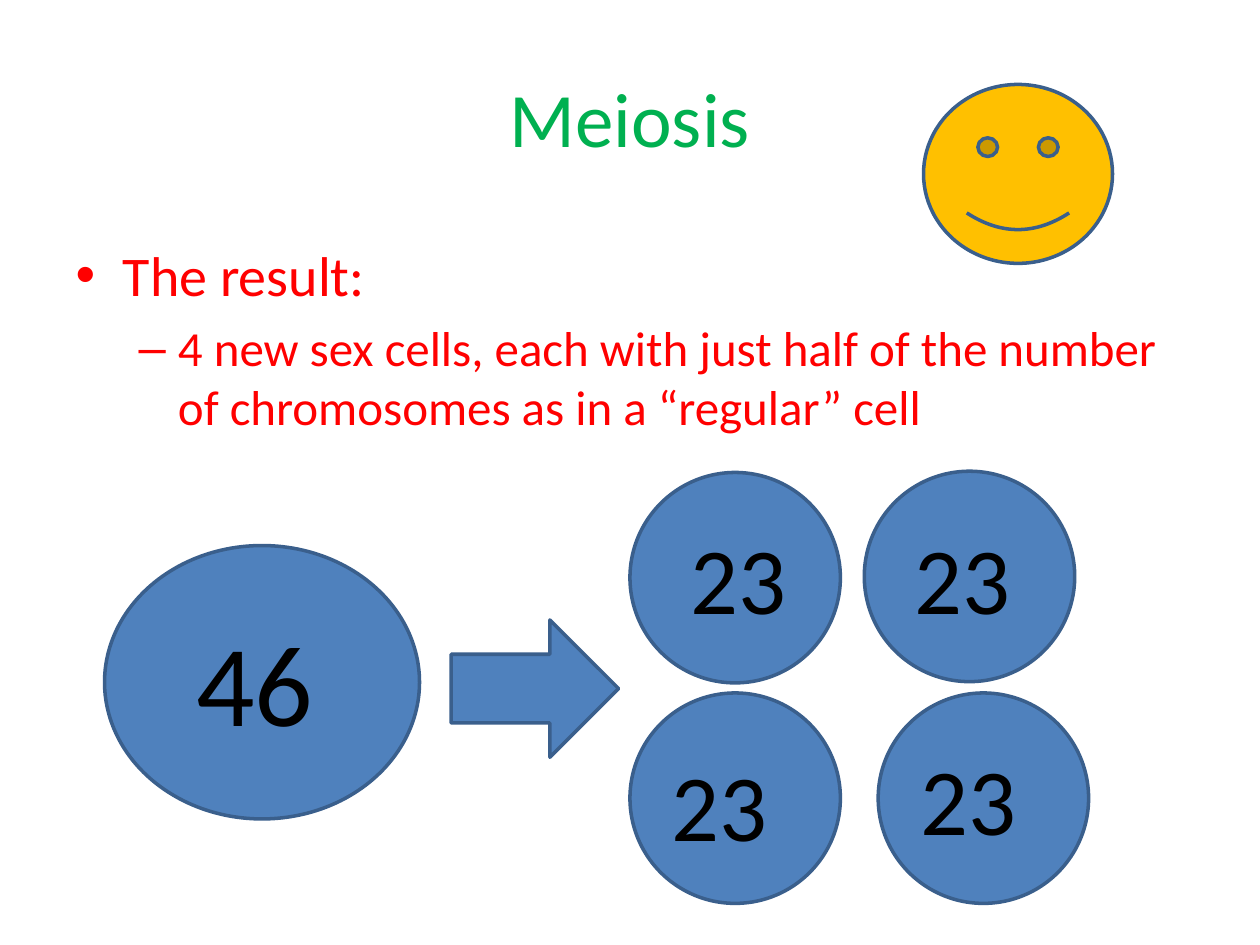
"""Build the slide that shows the result of meiosis."""
from pptx import Presentation
from pptx.dml.color import RGBColor
from pptx.enum.shapes import MSO_SHAPE as Shape
from pptx.enum.text import MSO_AUTO_SIZE as AutoSize
from pptx.util import Inches, Pt

GREEN = RGBColor(0x00, 0xB0, 0x50)
RED = RGBColor(0xFF, 0x00, 0x00)
BLACK = RGBColor(0x00, 0x00, 0x00)
BLUE = RGBColor(0x4F, 0x81, 0xBD)
OUTLINE = RGBColor(0x3A, 0x5F, 0x8C)
YELLOW = RGBColor(0xFF, 0xC0, 0x00)

DAUGHTER_SIZE = 1.67
DAUGHTER_CELLS = [(5, 3.75), (6.97, 5.5), (6.86, 3.74), (5, 5.5)]
DAUGHTER_COUNTS = [
    (5.38, 4.08, 1.44),
    (5.23, 5.88, 1.44),
    (7.21, 5.83, 1.44),
    (7.16, 4.08, 1.27),
]


def write(paragraph, text, size, color, font="Calibri", level=0):
    paragraph.level = level
    run = paragraph.add_run()
    run.text = text
    run.font.name = font
    run.font.size = Pt(size)
    run.font.color.rgb = color


def place(shape, left, top, width, height):
    shape.left, shape.top = Inches(left), Inches(top)
    shape.width, shape.height = Inches(width), Inches(height)


class SlideBuilder:
    def __init__(self, slide, line_color=OUTLINE, line_width=2):
        self.slide = slide
        self.line_color = line_color
        self.line_width = line_width

    def title(self, text, box):
        title = self.slide.shapes.title
        place(title, *box)
        write(title.text_frame.paragraphs[0], text, 44, GREEN)

    def bullets(self, items, box):
        body = self.slide.placeholders[1]
        place(body, *box)
        frame = body.text_frame
        for index, (text, size, level) in enumerate(items):
            paragraph = frame.add_paragraph() if index else frame.paragraphs[0]
            write(paragraph, text, size, RED, level=level)

    def group(self):
        return self.slide.shapes.add_group_shape()

    def shape(self, kind, box, fill=BLUE, parent=None):
        owner = parent or self.slide
        shape = owner.shapes.add_shape(kind, *map(Inches, box))
        shape.shadow.inherit = False
        shape.fill.solid()
        shape.fill.fore_color.rgb = fill
        shape.line.color.rgb = self.line_color
        shape.line.width = Pt(self.line_width)

    def label(self, text, box, size, parent):
        frame = parent.shapes.add_textbox(*map(Inches, box)).text_frame
        frame.word_wrap = True
        frame.auto_size = AutoSize.SHAPE_TO_FIT_TEXT
        write(frame.paragraphs[0], text, size, BLACK)


def main():
    deck = Presentation()
    deck.slide_width, deck.slide_height = Inches(10), Inches(7.5)
    builder = SlideBuilder(deck.slides.add_slide(deck.slide_layouts[1]))

    builder.title("Meiosis", (0.5, 0.3, 9, 1.25))
    builder.bullets(
        [
            ("The result:", 32, 0),
            ("4 new sex cells, each with just half of the number "
             "of chromosomes as in a “regular” cell", 28, 1),
        ],
        (0.5, 1.86, 9, 4.95),
    )

    daughters = builder.group()
    for left, top in DAUGHTER_CELLS:
        cell_box = (left, top, DAUGHTER_SIZE, DAUGHTER_SIZE)
        builder.shape(Shape.OVAL, cell_box, parent=daughters)
    for left, top, width in DAUGHTER_COUNTS:
        builder.label("23", (left, top, width, 1.01), 54, daughters)

    parent_cell = builder.group()
    builder.shape(Shape.OVAL, (0.83, 4.33, 2.5, 2.17), parent=parent_cell)
    builder.label("46", (1.46, 4.8, 1.25, 1.21), 66, parent_cell)

    builder.shape(Shape.RIGHT_ARROW, (3.58, 4.92, 1.33, 1.09))
    builder.shape(Shape.SMILEY_FACE, (7.33, 0.67, 1.5, 1.42), fill=YELLOW)
    deck.save("out.pptx")


if __name__ == "__main__":
    main()
